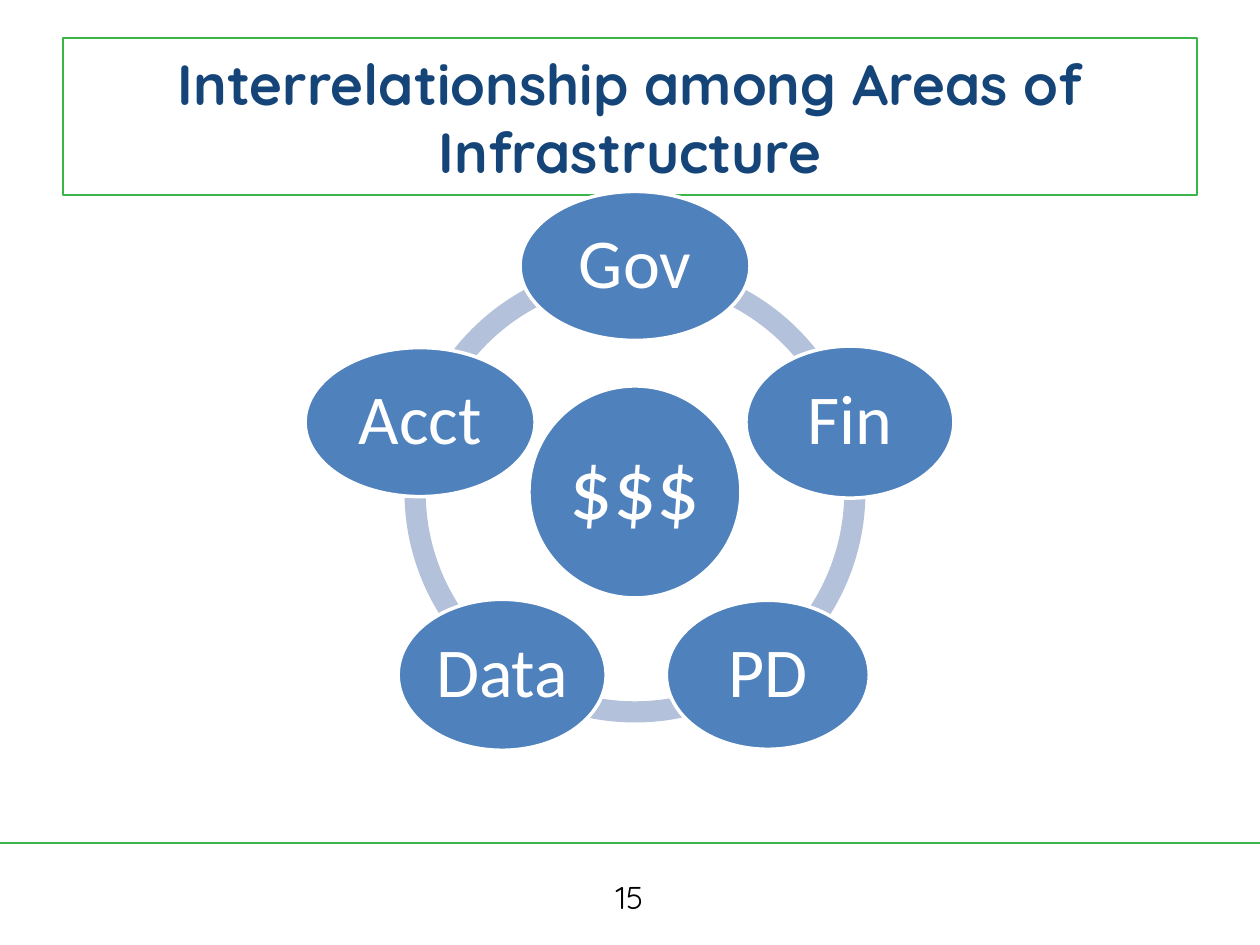
from math import cos, radians, sin

from lxml import etree
from pptx import Presentation
from pptx.dml.color import RGBColor
from pptx.enum.shapes import MSO_CONNECTOR, MSO_SHAPE
from pptx.enum.text import MSO_ANCHOR, PP_ALIGN
from pptx.oxml.ns import qn
from pptx.util import Pt

EMU_PER_PX = 914400 / 126
RECTANGLE = MSO_SHAPE.RECTANGLE
OVAL = MSO_SHAPE.OVAL
BLOCK_ARC = MSO_SHAPE.BLOCK_ARC
STRAIGHT = MSO_CONNECTOR.STRAIGHT
MIDDLE = MSO_ANCHOR.MIDDLE
CENTER = PP_ALIGN.CENTER

GREEN, NAVY, BLUE, PALE_BLUE = "39B54A", "154578", "4F81BD", "B3C1DB"
WHITE, BLACK = "FFFFFF", "000000"

CENTER_X, CENTER_Y = 635, 492
ORBIT_RADIUS = 226
RING_SIZE = 461
RING_THICKNESS = 0.046
HUB_SIZE = 212
# label, width, height; clockwise from the top
AREAS = [
    ("Gov", 230, 149),
    ("Fin", 208, 152),
    ("PD", 203, 149),
    ("Data", 208, 151),
    ("Acct", 230, 149),
]


def px(value):
    return round(value * EMU_PER_PX)


def color(hex_string):
    return RGBColor.from_string(hex_string)


def add_shape(slide, kind, box, fill=None, line=None, line_width=1):
    shape = slide.shapes.add_shape(kind, *map(px, box))
    shape.shadow.inherit = False
    if fill:
        shape.fill.solid()
        shape.fill.fore_color.rgb = color(fill)
    else:
        shape.fill.background()
    if line:
        shape.line.color.rgb = color(line)
        shape.line.width = Pt(line_width)
    else:
        shape.line.fill.background()
    return shape


def set_text(shape, text, size, font_name, font_color, bold=False, inset=8, wrap=True):
    frame = shape.text_frame
    frame.text = text
    frame.word_wrap = wrap
    frame.vertical_anchor = MIDDLE
    frame.margin_left = frame.margin_right = px(inset)
    frame.margin_top = frame.margin_bottom = px(inset)
    paragraph = frame.paragraphs[0]
    paragraph.alignment = CENTER
    font = paragraph.runs[0].font
    font.size = Pt(size)
    font.name = font_name
    font.bold = bold
    font.color.rgb = color(font_color)
    return paragraph


def add_title(slide, text):
    title = add_shape(slide, RECTANGLE, (63, 38, 1134, 157), line=GREEN)
    set_text(title, text, 32.4, "Quicksand", NAVY, bold=True)


def add_footer(slide, number):
    rule = slide.shapes.add_connector(STRAIGHT, 0, px(843), px(1260), px(843))
    rule.line.color.rgb = color(GREEN)
    rule.line.width = Pt(1.5)
    etree.SubElement(rule._element.spPr, qn("a:effectLst"))
    number_box = slide.shapes.add_textbox(px(483), px(872), px(293), px(50))
    set_text(number_box, number, 18, "Quicksand", BLACK)


def add_arc(slide, start, end):
    """Add one ring segment between two angles in degrees, clockwise from east."""
    box = (CENTER_X - RING_SIZE / 2, CENTER_Y - RING_SIZE / 2, RING_SIZE, RING_SIZE)
    arc = add_shape(slide, BLOCK_ARC, box, fill=PALE_BLUE)
    # Adjustments count in units of 100000, angles in 60000ths of a degree.
    arc.adjustments[0] = start % 360 * 0.6
    arc.adjustments[1] = end % 360 * 0.6
    arc.adjustments[2] = RING_THICKNESS


def add_node(slide, label, x, y, width, height, size):
    """Add a labelled ellipse centred on x, y."""
    box = (x - width / 2, y - height / 2, width, height)
    node = add_shape(slide, OVAL, box, fill=BLUE, line=WHITE, line_width=2)
    paragraph = set_text(node, label, size, "Calibri", WHITE, wrap=False)
    paragraph.line_spacing = 0.9


def add_cycle(slide):
    step = 360 / len(AREAS)
    angles = [step * index - 90 for index in range(len(AREAS))]
    for angle in angles:
        add_arc(slide, angle, angle + step)
    add_node(slide, "$$$", CENTER_X, CENTER_Y, HUB_SIZE, HUB_SIZE, 49)
    for angle, (label, width, height) in zip(angles, AREAS):
        x = CENTER_X + ORBIT_RADIUS * cos(radians(angle))
        y = CENTER_Y + ORBIT_RADIUS * sin(radians(angle))
        add_node(slide, label, x, y, width, height, 40)


def main():
    presentation = Presentation()
    presentation.slide_width = px(1260)
    presentation.slide_height = px(945)
    slide = presentation.slides.add_slide(presentation.slide_layouts[6])
    add_footer(slide, "15")
    add_title(slide, "Interrelationship among Areas of Infrastructure")
    add_cycle(slide)
    presentation.save("out.pptx")


if __name__ == "__main__":
    main()
